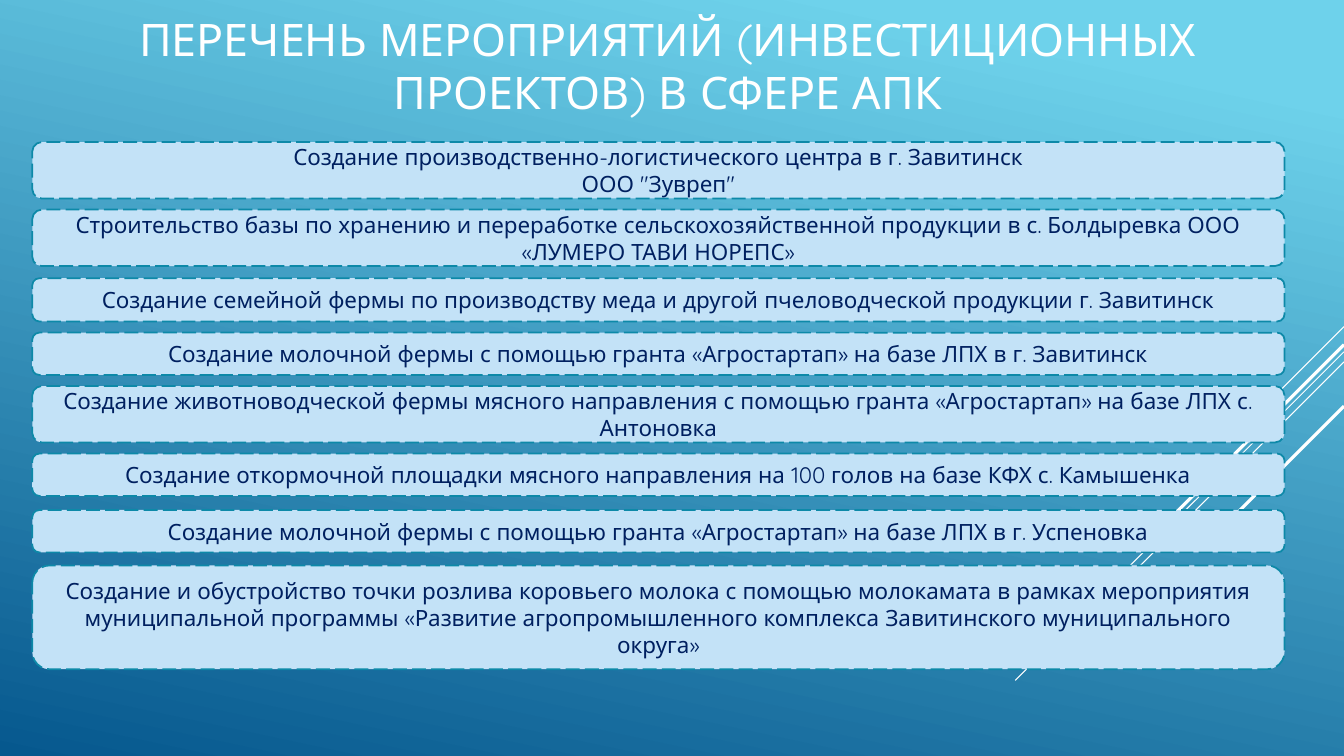
from dataclasses import dataclass

from lxml.etree import SubElement
from pptx import Presentation
from pptx.dml.color import RGBColor as RGB
from pptx.enum.dml import MSO_LINE as Dash
from pptx.enum.shapes import MSO_CONNECTOR as Link, MSO_SHAPE as Form
from pptx.enum.text import MSO_ANCHOR as Anchor, MSO_AUTO_SIZE as Fit, PP_ALIGN as Align
from pptx.oxml.ns import qn
from pptx.util import Inches, Pt


@dataclass
class Theme:
    font: str = "Quicksand"
    light: str = "6ED2EB"
    deep: str = "06588E"
    white: str = "FFFFFF"
    panel: str = "C3E2F7"
    edge: str = "0D89A8"
    ink: str = "002060"
    head: int = 32
    body: int = 16


WIDE, HIGH = 13.33, 7.5
LEFT = 0.32

# Rays: start height on the right edge, run to the lower left, line width
RAYS = [(3.24, 1, 0.75), (3.49, 3.26, 0.75), (3.59, 2.07, 0.75),
        (3.42, 1.91, 2.25), (4.03, 1.39, 2.25)]

TITLE = "ПЕРЕЧЕНЬ МЕРОПРИЯТИЙ (ИНВЕСТИЦИОННЫХ ПРОЕКТОВ) В СФЕРЕ АПК"

# Projects: top, height, text
ITEMS = [
    (1.41, 0.56, "Создание производственно-логистического центра в г. Завитинск\n"
                 "ООО \"Зувреп\""),
    (2.08, 0.56, "Строительство базы по хранению и переработке сельскохозяйственной "
                 "продукции в с. Болдыревка ООО «ЛУМЕРО ТАВИ НОРЕПС»"),
    (2.76, 0.43, "Создание семейной фермы по производству меда и другой "
                 "пчеловодческой продукции г. Завитинск"),
    (3.3, 0.42, "Создание молочной фермы с помощью гранта «Агростартап» "
                "на базе ЛПХ в г. Завитинск"),
    (3.83, 0.56, "Создание животноводческой фермы мясного направления с помощью "
                 "гранта «Агростартап» на базе ЛПХ с. Антоновка"),
    (4.5, 0.42, "Создание откормочной площадки мясного направления на 100 голов "
                "на базе КФХ с. Камышенка"),
    (5.06, 0.42, "Создание молочной фермы с помощью гранта «Агростартап» "
                 "на базе ЛПХ в г. Успеновка"),
    (5.61, 1.03, "Создание и обустройство точки розлива коровьего молока с помощью "
                 "молокамата в рамках мероприятия муниципальной программы «Развитие "
                 "агропромышленного комплекса Завитинского муниципального округа»"),
]


def write(frame, text, *, font, size, color, align=Align.CENTER, pitch=1.0):
    frame.word_wrap = True
    frame.auto_size = Fit.NONE
    frame.vertical_anchor = Anchor.MIDDLE
    frame.text = text
    for para in frame.paragraphs:
        para.alignment = align
        para.line_spacing = pitch
        para.space_before = Pt(0)
        para.font.name = font
        para.font.size = Pt(size)
        para.font.color.rgb = RGB.from_string(color)


class Painter:
    def __init__(self, slide, theme):
        self.slide, self.theme = slide, theme

    def back(self):
        fill = self.slide.background.fill
        fill.gradient()
        fill.gradient_angle = 258
        hues = ((0.1, self.theme.light), (1, self.theme.deep))
        for stop, (place, hue) in zip(fill.gradient_stops, hues):
            stop.position = place
            stop.color.rgb = RGB.from_string(hue)

    def ray(self, top, run, width):
        line = self.slide.shapes.add_connector(
            Link.STRAIGHT, Inches(WIDE), Inches(top),
            Inches(WIDE - run), Inches(top + run))
        line.line.color.rgb = RGB.from_string(self.theme.white)
        line.line.width = Pt(width)
        SubElement(line.element.spPr, qn("a:effectLst"))

    def title(self, text):
        look = self.theme
        box = self.slide.shapes.title
        box.left, box.top = Inches(LEFT), Inches(0.25)
        box.width, box.height = Inches(12.61), Inches(0.79)
        write(box.text_frame, text, font=look.font, size=look.head, color=look.white)

    def panel(self, top, height, text):
        look = self.theme
        box = self.slide.shapes.add_shape(
            Form.ROUNDED_RECTANGLE, Inches(LEFT), Inches(top),
            Inches(12.42), Inches(height))
        box.shadow.inherit = False
        box.fill.solid()
        box.fill.fore_color.rgb = RGB.from_string(look.panel)
        box.line.color.rgb = RGB.from_string(look.edge)
        box.line.width = Pt(1.25)
        box.line.dash_style = Dash.LONG_DASH
        write(box.text_frame, text, font=look.font, size=look.body, color=look.ink)


def main():
    deck = Presentation()
    deck.slide_width, deck.slide_height = Inches(WIDE), Inches(HIGH)
    art = Painter(deck.slides.add_slide(deck.slide_layouts[5]), Theme())

    # Backdrop
    art.back()
    for ray in RAYS:
        art.ray(*ray)

    # Heading and project list
    art.title(TITLE)
    for item in ITEMS:
        art.panel(*item)

    deck.save("out.pptx")


if __name__ == "__main__":
    main()
